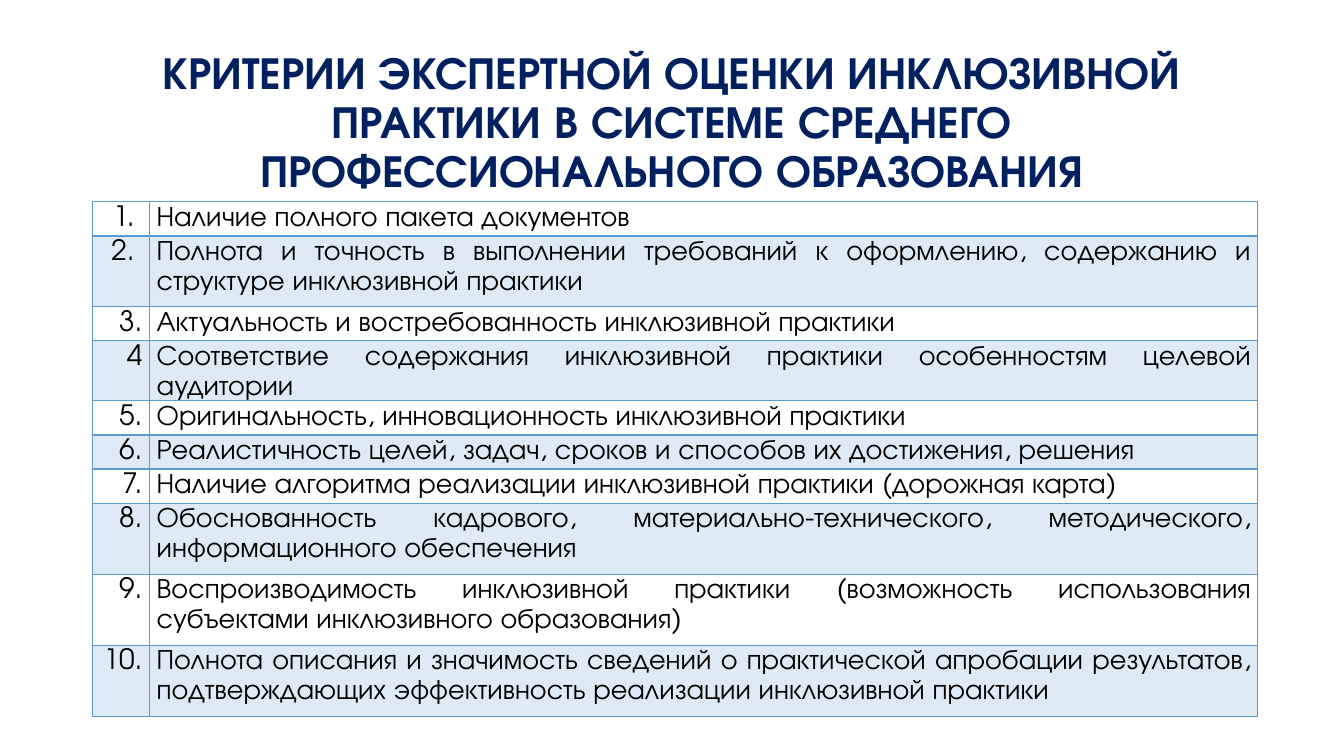
from lxml import etree
from pptx import Presentation
from pptx.dml.color import RGBColor
from pptx.enum.text import MSO_ANCHOR, PP_ALIGN
from pptx.oxml.ns import qn
from pptx.util import Cm, Pt

CENTER, RIGHT, JUSTIFY = PP_ALIGN.CENTER, PP_ALIGN.RIGHT, PP_ALIGN.JUSTIFY
MIDDLE = MSO_ANCHOR.MIDDLE

FONT = "TeX Gyre Adventor"
NAVY, BLACK, WHITE = "002060", "000000", "FFFFFF"
BORDER_BLUE, PALE_BLUE = "5B9BD5", "DEEBF7"

TITLE = ("КРИТЕРИИ ЭКСПЕРТНОЙ ОЦЕНКИ ИНКЛЮЗИВНОЙ ПРАКТИКИ "
         "В СИСТЕМЕ СРЕДНЕГО ПРОФЕССИОНАЛЬНОГО ОБРАЗОВАНИЯ")
SINGLE, DOUBLE = 0.86, 1.79
CRITERIA = [
    ("1. ", "Наличие полного пакета документов", SINGLE),
    ("2. ", "Полнота и точность в выполнении требований к оформлению, "
            "содержанию и структуре инклюзивной практики", DOUBLE),
    ("3.", "Актуальность и востребованность инклюзивной практики", SINGLE),
    ("4", "Соответствие содержания инклюзивной практики особенностям "
          "целевой аудитории", SINGLE),
    ("5.", "Оригинальность, инновационность инклюзивной практики", SINGLE),
    ("6.", "Реалистичность целей, задач, сроков и способов их достижения, "
           "решения", SINGLE),
    ("7.", "Наличие алгоритма реализации инклюзивной практики "
           "(дорожная карта)", SINGLE),
    ("8.", "Обоснованность кадрового, материально-технического, "
           "методического, информационного обеспечения", DOUBLE),
    ("9.", "Воспроизводимость инклюзивной практики (возможность "
           "использования субъектами инклюзивного образования)", DOUBLE),
    ("10.", "Полнота описания и значимость сведений о практической апробации "
            "результатов, подтверждающих эффективность реализации "
            "инклюзивной практики", DOUBLE),
]


def color(value):
    return RGBColor.from_string(value)


def set_attributes(target, values):
    for name, value in values.items():
        setattr(target, name, value)


def format_paragraph(paragraph, text, size, text_color, alignment, spacing, bold=False):
    paragraph.text = text
    set_attributes(paragraph, {"alignment": alignment, "line_spacing": spacing})
    set_attributes(paragraph.font, {"name": FONT, "size": Pt(size), "bold": bold})
    paragraph.font.color.rgb = color(text_color)


def add_title(slide):
    title = slide.shapes.title
    set_attributes(title, {"left": Cm(2.33), "top": Cm(1.9),
                           "width": Cm(29.21), "height": Cm(3.68)})
    # The larger bottom margin lifts the heading clear of the table.
    set_attributes(title.text_frame, {"word_wrap": True, "vertical_anchor": MIDDLE,
                                      "margin_bottom": Cm(1.36)})
    format_paragraph(title.text_frame.paragraphs[0], TITLE, 32.4, NAVY, CENTER, 0.9, True)


def set_borders(cell, widths):
    """Draw the cell's borders; widths maps a side tag to points."""
    properties = cell._tc.get_or_add_tcPr()
    for position, (side, width) in enumerate(widths.items()):
        line = etree.Element(qn(f"a:{side}"), w=str(Pt(width)))
        fill = etree.SubElement(line, qn("a:solidFill"))
        etree.SubElement(fill, qn("a:srgbClr"), val=BORDER_BLUE)
        properties.insert(position, line)


def fill_cell(cell, text, alignment, background, widths):
    set_attributes(cell, {"margin_left": Cm(0.18), "margin_right": Cm(0.18),
                          "margin_top": 0, "margin_bottom": 0})
    format_paragraph(cell.text_frame.paragraphs[0], text, 20, BLACK, alignment, 1.15)
    cell.fill.solid()
    cell.fill.fore_color.rgb = color(background)
    set_borders(cell, widths)


def add_criteria_table(slide):
    height = sum(row_height for _, _, row_height in CRITERIA)
    table = slide.shapes.add_table(len(CRITERIA), 2, Cm(2.33), Cm(5.08),
                                   Cm(29.37), Cm(height)).table
    for column, width in zip(table.columns, (1.44, 27.93)):
        column.width = Cm(width)
    for index, (number, criterion, row_height) in enumerate(CRITERIA):
        table.rows[index].height = Cm(row_height)
        background = PALE_BLUE if index % 2 else WHITE
        widths = {"lnL": 1, "lnR": 1, "lnT": 2 if index == 1 else 1,
                  "lnB": 2 if index == 0 else 1}
        fill_cell(table.cell(index, 0), number, RIGHT, background, widths)
        fill_cell(table.cell(index, 1), criterion, JUSTIFY, background, widths)


def main():
    presentation = Presentation()
    set_attributes(presentation, {"slide_width": Cm(33.87), "slide_height": Cm(19.05)})
    slide = presentation.slides.add_slide(presentation.slide_layouts[5])
    add_title(slide)
    add_criteria_table(slide)
    presentation.save("out.pptx")


if __name__ == "__main__":
    main()
